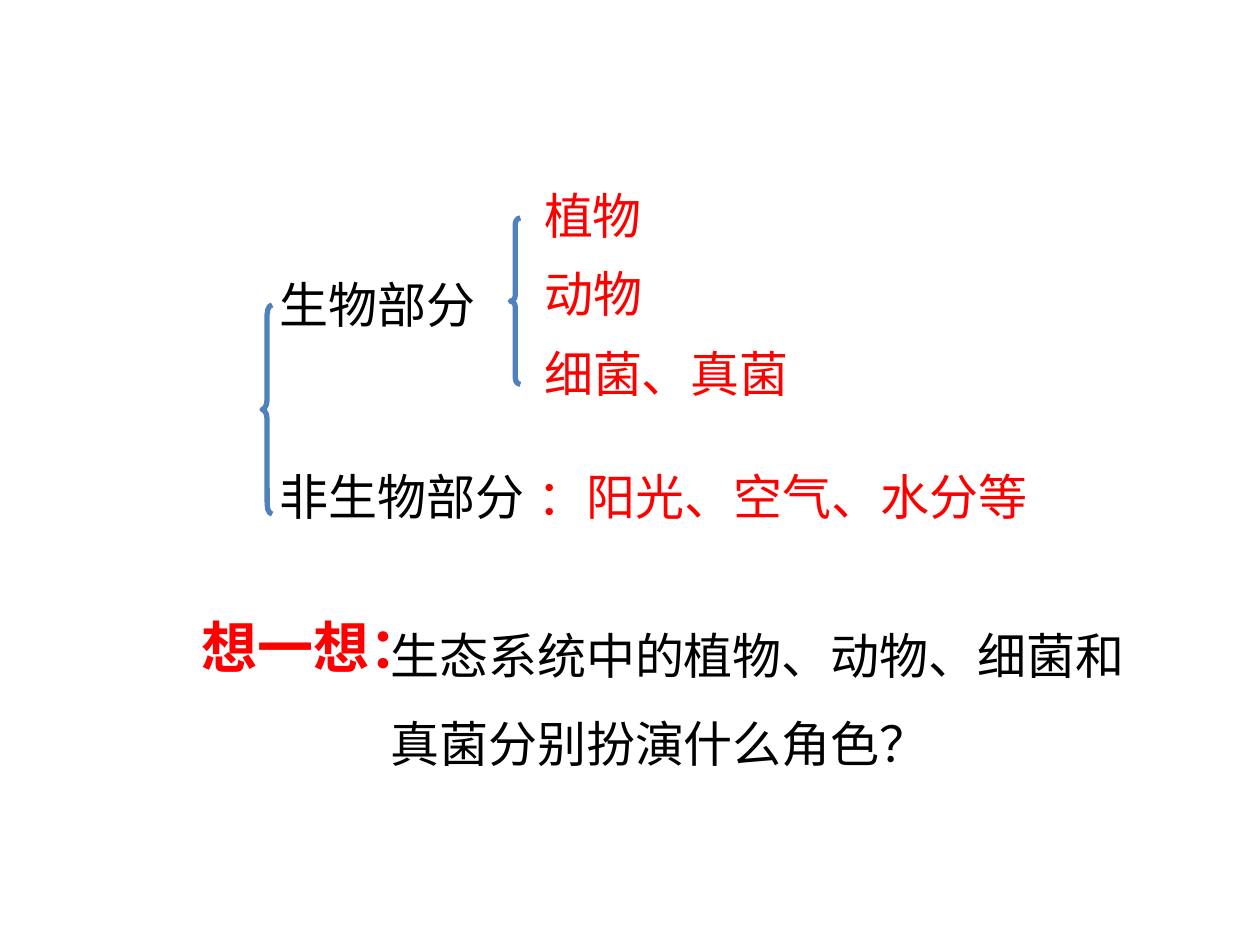
from pptx import Presentation
from pptx.dml.color import RGBColor
from pptx.enum.lang import MSO_LANGUAGE_ID as Language
from pptx.enum.shapes import MSO_SHAPE as Shape
from pptx.enum.text import PP_ALIGN as Align
from pptx.util import Inches, Pt
from lxml.etree import SubElement
from pptx.oxml.ns import qn

CJK_FONT = "Noto Sans CJK SC"
BLACK, RED, BLUE = "000000", "FF0000", "4F81BD"
LINE_HEIGHT = 0.57


def colour(value):
    return RGBColor.from_string(value)


def add_text(page, box, text, ink, size=28, font=CJK_FONT, bold=False,
             align=Align.LEFT, line_spacing=None):
    """Add a wrapped, one-paragraph text box at (left, top, width, height)."""
    frame = page.shapes.add_textbox(*map(Inches, box)).text_frame
    frame.word_wrap = True
    para = frame.paragraphs[0]
    para.text = text
    para.alignment = align
    para.line_spacing = line_spacing
    span = para.runs[0]
    span.font.size = Pt(size)
    span.font.bold = bold
    span.font.name = font
    span.font.color.rgb = colour(ink)
    span.font.language_id = Language.SIMPLIFIED_CHINESE
    east_asian = SubElement(span.font._element, qn("a:ea"))
    east_asian.set("typeface", CJK_FONT)


def add_brace(page, box, curve):
    brace = page.shapes.add_shape(Shape.LEFT_BRACE, *map(Inches, box))
    brace.adjustments[0] = curve
    brace.shadow.inherit = False
    brace.fill.background()
    brace.line.color.rgb = colour(BLUE)
    brace.line.width = Pt(3)


def add_components(page, left, top):
    """Draw the tree of living and non-living parts."""
    add_brace(page, (left, top + 1, 0.08, 1.66), 0.957)
    add_brace(page, (left + 1.97, top + 0.31, 0.08, 1.32), 0.579)
    labels = [
        ("生物部分", 0.04, 0.71, 1.97, BLACK),
        ("植物", 2.14, 0, 1.13, RED),
        ("动物", 2.14, 0.62, 1.28, RED),
        ("细菌、真菌", 2.14, 1.26, 2.28, RED),
        ("非生物部分", 0.04, 2.23, 2.21, BLACK),
        ("：阳光、空气、水分等", 2.09, 2.23, 4.31, RED),
    ]
    for text, across, down, width, ink in labels:
        add_text(page, (left + across, top + down, width, LINE_HEIGHT), text, ink)


def add_question(page, left, top):
    add_text(page, (left + 1.55, top, 6.22, 1.51),
             "生态系统中的植物、动物、细菌和真菌分别扮演什么角色？",
             BLACK, font="Arial", line_spacing=1.5)
    add_text(page, (left, top + 0.13, 1.63, 0.64), "想一想：", RED,
             size=32, font="Arial", bold=True, align=Align.CENTER)


def main():
    deck = Presentation()
    deck.slide_width, deck.slide_height = Inches(10), Inches(7.5)
    page = deck.slides.add_slide(deck.slide_layouts[6])
    add_components(page, 2.08, 1.42)
    add_question(page, 1.45, 4.68)
    deck.save("out.pptx")


if __name__ == "__main__":
    main()
